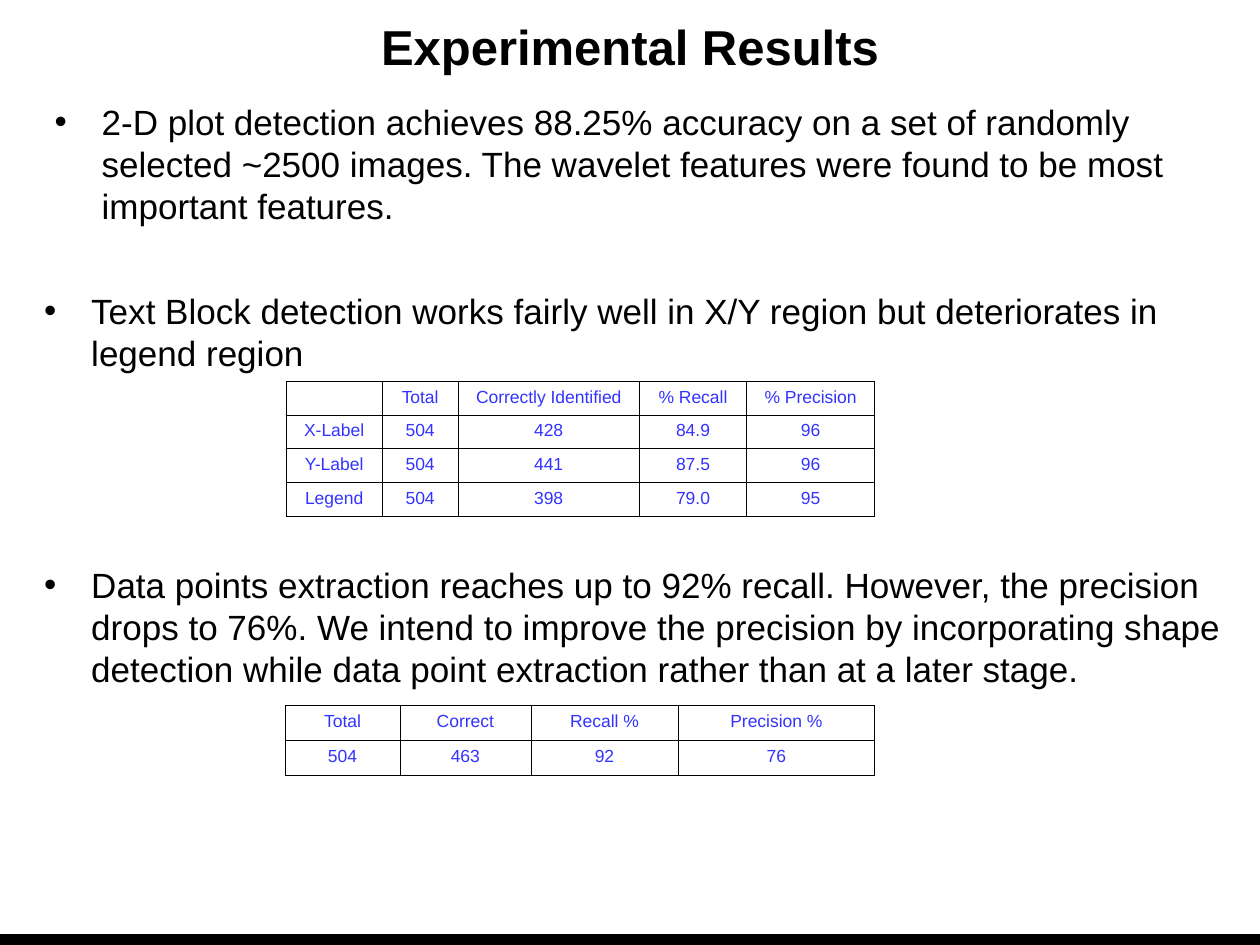
from lxml import etree
from pptx import Presentation, util as u
from pptx.dml.color import RGBColor
from pptx.enum import shapes, text
from pptx.oxml import ns

COLORS = {"text": "000000", "cell": "3333FF", "bar": "000000", "border": "000000"}


class SlideBuilder:
    font = "Arial"
    hanging = u.Cm(0.95)
    border_width = u.Pt(0.25)

    def __init__(self, presentation):
        self.slide = presentation.slides.add_slide(presentation.slide_layouts[6])

    def run(self, paragraph, words, size, color, bold=False):
        run = paragraph.add_run()
        run.text = words
        run.font.name = self.font
        run.font.size = u.Pt(size)
        run.font.bold = bold
        run.font.color.rgb = RGBColor.from_string(COLORS[color])

    def text_box(self, left, top, width, height):
        box = self.slide.shapes.add_textbox(u.Cm(left), u.Cm(top), u.Cm(width), u.Cm(height))
        box.text_frame.word_wrap = True
        return box.text_frame.paragraphs[0]

    def title(self, words, *place):
        paragraph = self.text_box(*place)
        paragraph.alignment = text.PP_ALIGN.CENTER
        self.run(paragraph, words, 28, "text", bold=True)

    def bullet(self, words, *place):
        paragraph = self.text_box(*place)
        properties = paragraph._p.get_or_add_pPr()
        properties.set("marL", str(self.hanging))
        properties.set("indent", str(-self.hanging))
        etree.SubElement(properties, ns.qn("a:buFont"), typeface=self.font)
        etree.SubElement(properties, ns.qn("a:buChar"), char="•")
        self.run(paragraph, words, 20, "text")

    def bar(self, left, top, width, height):
        shape = self.slide.shapes.add_shape(
            shapes.MSO_SHAPE.RECTANGLE, u.Cm(left), u.Cm(top), u.Cm(width), u.Cm(height))
        shape.shadow.inherit = False
        shape.fill.solid()
        shape.fill.fore_color.rgb = RGBColor.from_string(COLORS["bar"])
        shape.line.color.rgb = RGBColor.from_string(COLORS["bar"])
        shape.line.width = u.Pt(0.75)

    def cell(self, cell, words):
        paragraph = cell.text_frame.paragraphs[0]
        paragraph.alignment = text.PP_ALIGN.CENTER
        if words:
            self.run(paragraph, words, 10, "cell")
        else:  # keeps the empty cell as low as its row
            etree.SubElement(paragraph._p, ns.qn("a:endParaRPr"), sz="1000")
        properties = cell._tc.get_or_add_tcPr()
        for side in ("lnL", "lnR", "lnT", "lnB"):
            line = etree.SubElement(properties, ns.qn("a:" + side), w=str(self.border_width))
            fill = etree.SubElement(line, ns.qn("a:solidFill"))
            etree.SubElement(fill, ns.qn("a:srgbClr"), val=COLORS["border"])
        cell.fill.background()

    def table(self, rows, left, top, widths, row_height):
        frame = self.slide.shapes.add_table(
            len(rows), len(widths), u.Cm(left), u.Cm(top),
            u.Cm(sum(widths)), u.Cm(row_height * len(rows)))
        table = frame.table
        table.first_row = table.horz_banding = False
        for column, width in zip(table.columns, widths):
            column.width = u.Cm(width)
        for row, values in zip(table.rows, rows):
            row.height = u.Cm(row_height)
            for cell, words in zip(row.cells, values):
                self.cell(cell, words)


def main():
    presentation = Presentation()
    presentation.slide_width = u.Cm(25.4)
    presentation.slide_height = u.Cm(19.05)
    builder = SlideBuilder(presentation)

    # Footer bar and title
    builder.bar(0, 18.85, 25.4, 0.2)
    builder.title("Experimental Results", 0.2, 0.2, 25, 1.45)

    # Plot detection
    builder.bullet(
        "2-D plot detection achieves 88.25% accuracy on a set of randomly selected ~2500 "
        "images. The wavelet features were found to be most important features.",
        0.85, 1.9, 23.05, 3.18)

    # Text block detection
    builder.bullet(
        "Text Block detection works fairly well in X/Y region but deteriorates in legend region",
        0.64, 5.72, 24.76, 1.83)
    builder.table(
        [["", "Total", "Correctly Identified", "% Recall", "% Precision"],
         ["X-Label", "504", "428", "84.9", "96"],
         ["Y-Label", "504", "441", "87.5", "96"],
         ["Legend", "504", "398", "79.0", "95"]],
        5.76, 7.68, [1.95, 1.52, 3.66, 2.16, 2.58], 0.68)

    # Data point extraction
    builder.bullet(
        "Data points extraction reaches up to 92% recall. However, the precision drops to 76%. "
        "We intend to improve the precision by incorporating shape detection while data point "
        "extraction rather than at a later stage.",
        0.64, 11.23, 24.76, 2.69)
    builder.table(
        [["Total", "Correct", "Recall %", "Precision %"],
         ["504", "463", "92", "76"]],
        5.75, 14.22, [2.31, 2.64, 2.97, 3.96], 0.7)

    presentation.save("out.pptx")


if __name__ == "__main__":
    main()
